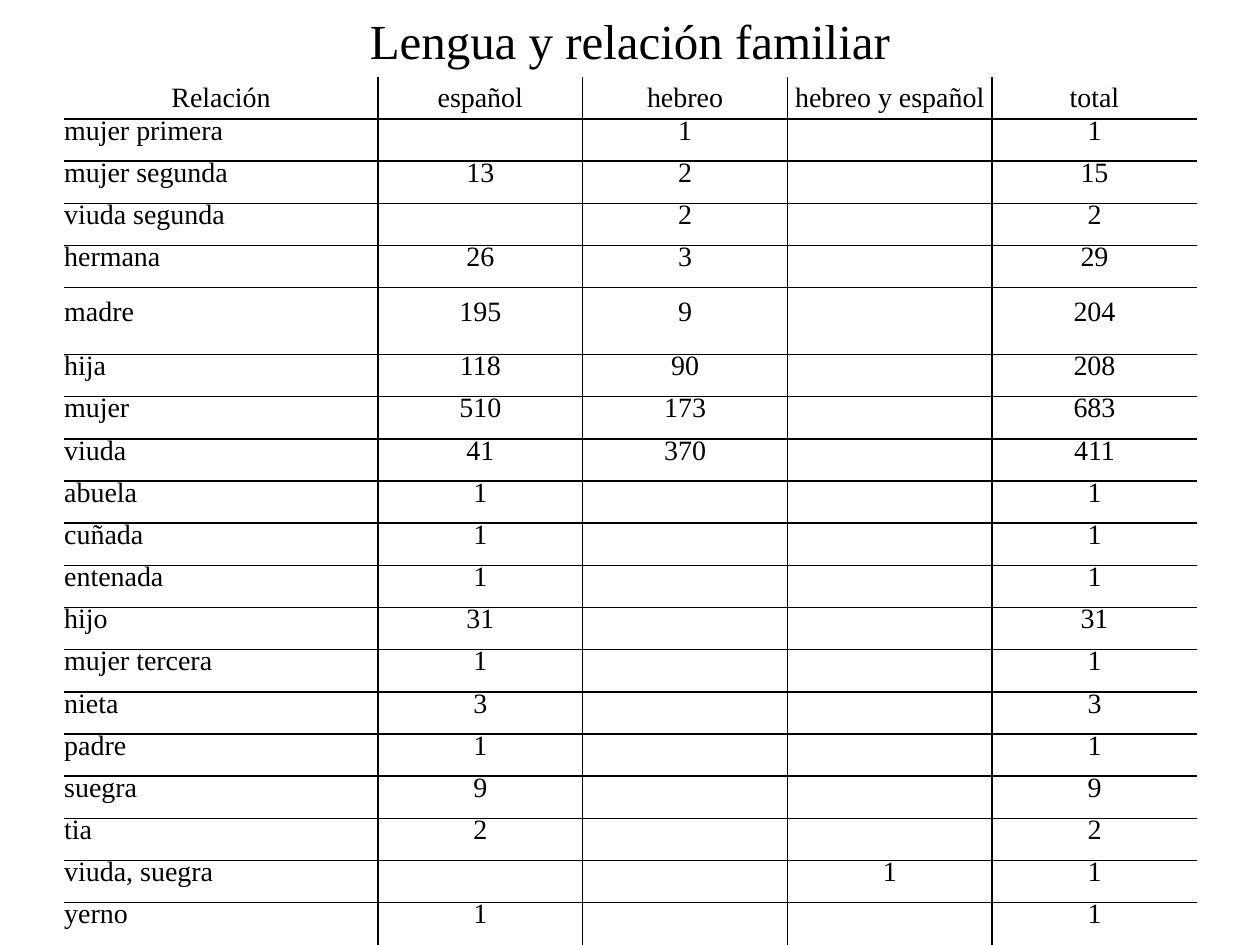
"""Build a slide with a table of language by family relation."""
from lxml import etree
from pptx import Presentation
from pptx import util as u
from pptx.dml.color import RGBColor
from pptx.enum import text
from pptx.oxml.ns import qn

COLORS = {"ink": "000000"}
FONT = "Times New Roman"
ROWS = [
    ("Relación", "español", "hebreo", "hebreo y español", "total"),
    ("mujer primera", "", "1", "", "1"),
    ("mujer segunda", "13", "2", "", "15"),
    ("viuda segunda", "", "2", "", "2"),
    ("hermana", "26", "3", "", "29"),
    ("madre", "195", "9", "", "204"),
    ("hija", "118", "90", "", "208"),
    ("mujer", "510", "173", "", "683"),
    ("viuda", "41", "370", "", "411"),
    ("abuela", "1", "", "", "1"),
    ("cuñada", "1", "", "", "1"),
    ("entenada", "1", "", "", "1"),
    ("hijo", "31", "", "", "31"),
    ("mujer tercera", "1", "", "", "1"),
    ("nieta", "3", "", "", "3"),
    ("padre", "1", "", "", "1"),
    ("suegra", "9", "", "", "9"),
    ("tia", "2", "", "", "2"),
    ("viuda, suegra", "", "", "1", "1"),
    ("yerno", "1", "", "", "1"),
]


def style_text(p, size):
    p.alignment = text.PP_ALIGN.CENTER
    for r in p.runs:
        r.font.name, r.font.size = FONT, u.Pt(size)
        r.font.color.rgb = RGBColor.from_string(COLORS["ink"])


def add_border(tc_pr, side, visible):
    ln = etree.SubElement(tc_pr, qn(f"a:ln{side}"), w=str(u.Pt(1)))
    if visible:
        fill = etree.SubElement(ln, qn("a:solidFill"))
        etree.SubElement(fill, qn("a:srgbClr"), val=COLORS["ink"])
    else:
        etree.SubElement(ln, qn("a:noFill"))


prs = Presentation()
prs.slide_width, prs.slide_height = u.Inches(10), u.Inches(7.5)
s = prs.slides.add_slide(prs.slide_layouts[5])

title = s.shapes.title
title.left, title.top = u.Inches(0.71), u.Inches(0.03)
title.width, title.height = u.Inches(8.58), u.Inches(0.57)
tf = title.text_frame
tf.text = "Lengua y relación familiar"
tf.word_wrap = True
tf.auto_size = text.MSO_AUTO_SIZE.SHAPE_TO_FIT_TEXT
tf.vertical_anchor = text.MSO_ANCHOR.TOP
style_text(tf.paragraphs[0], 28)

n_rows, n_cols = len(ROWS), len(ROWS[0])
width, height = u.Inches(8.99), u.Inches(6.89)
first_col, tall_row = u.Inches(2.49), u.Inches(0.53)
table = s.shapes.add_table(
    n_rows, n_cols, u.Inches(0.51), u.Inches(0.61), width, height).table
table.first_row = table.horz_banding = False
for j, col in enumerate(table.columns):
    col.width = first_col if j == 0 else (width - first_col) // (n_cols - 1)
for row, values in zip(table.rows, ROWS):
    is_tall = values[0] == "madre"
    row.height = tall_row if is_tall else (height - tall_row) // (n_rows - 1)

for i, values in enumerate(ROWS):
    for j, value in enumerate(values):
        cell = table.cell(i, j)
        cell.margin_left = cell.margin_right = 0
        cell.margin_top = cell.margin_bottom = 0
        cell.vertical_anchor = text.MSO_ANCHOR.MIDDLE
        p = cell.text_frame.paragraphs[0]
        p.text = value
        style_text(p, 16)
        if i > 0:
            p.line_spacing = u.Pt(7.2)
            if j == 0:
                p.alignment = text.PP_ALIGN.LEFT
        inner = {"L": j > 0, "R": j < n_cols - 1, "T": i > 0, "B": i < n_rows - 1}
        for side, visible in inner.items():
            add_border(cell._tc.get_or_add_tcPr(), side, visible)
        cell.fill.background()

prs.save("out.pptx")
